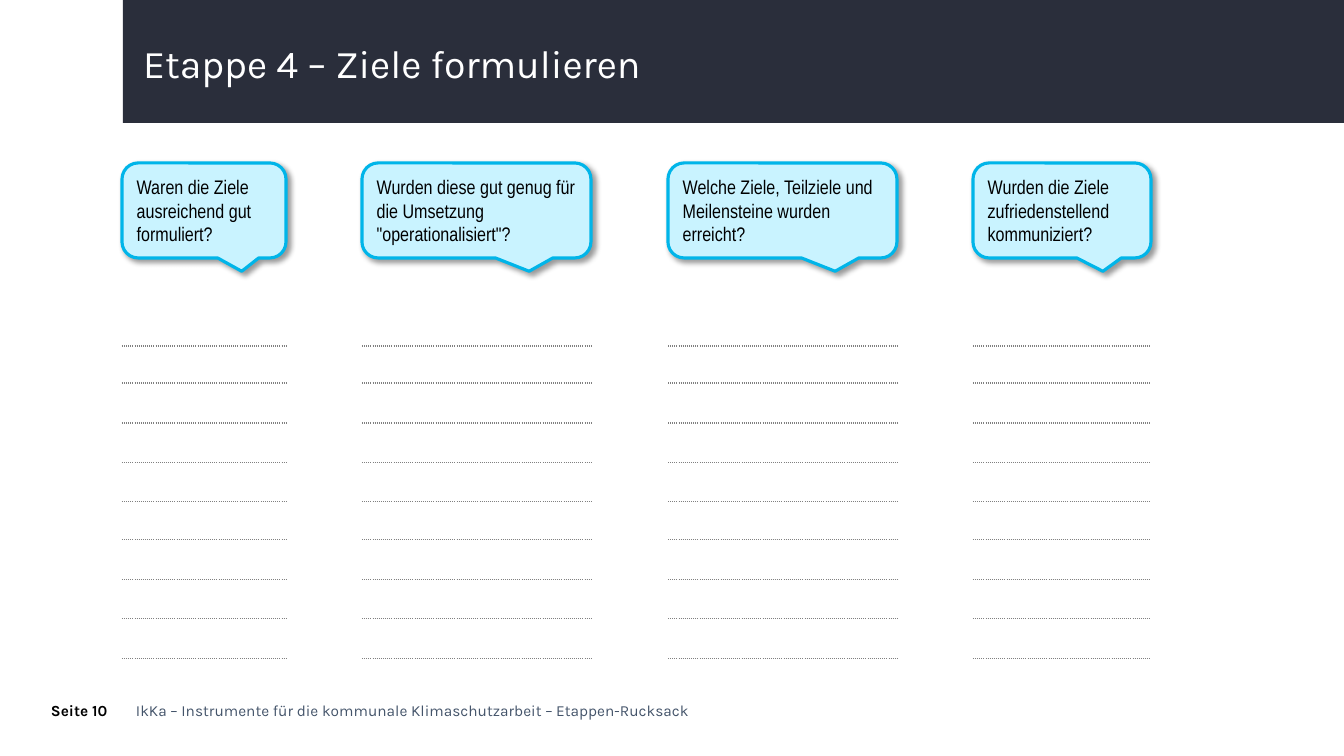
from dataclasses import dataclass

from lxml.etree import SubElement
from pptx import Presentation
from pptx.dml.color import RGBColor
from pptx.enum.shapes import MSO_SHAPE
from pptx.enum.text import MSO_ANCHOR, PP_ALIGN
from pptx.oxml import parse_xml
from pptx.oxml.ns import nsdecls, qn
from pptx.util import Emu, Pt

TITLE = "Etappe 4 – Ziele formulieren"
PAGE = "Seite 10"
FOOTER = "IkKa – Instrumente für die kommunale Klimaschutzarbeit – Etappen-Rucksack"
COLUMNS = [
    ("Waren die Ziele ausreichend gut formuliert?", 122, 164),
    ('Wurden diese gut genug für die Umsetzung "operationalisiert"?', 362, 229),
    ("Welche Ziele, Teilziele und Meilensteine wurden erreicht?", 668, 229),
    ("Wurden die Ziele zufriedenstellend kommuniziert?", 973, 178),
]
ROW_HEIGHTS = [38, 37, 40, 40, 39, 38, 40, 39, 40]
CALLOUT_TOP, CALLOUT_HEIGHT, TABLE_TOP = 163, 95, 308
CALLOUT_ADJUSTMENTS = (0.23, 0.64, 0.17)
NO_GRID_STYLE = "{2D5ABB26-0587-4C30-8999-92F81FD0307C}"


@dataclass(frozen=True)
class Theme:
    bar: str = "2A2E3B"
    white: str = "FFFFFF"
    black: str = "000000"
    footer: str = "44546A"
    callout: str = "C9F3FF"
    outline: str = "00B5E9"
    rule: str = "808080"
    font: str = "Karla"
    callout_font: str = "Arial Narrow"
    title_size: int = 28
    callout_size: int = 14
    footer_size: int = 11


THEME = Theme()


def px(value):
    return Emu(round(value * 914400 / 100.8))


def box(*lengths):
    return [px(length) for length in lengths]


def write(shape, text, font, size, color, bold=False):
    frame = shape.text_frame
    frame.word_wrap = True
    paragraph = frame.paragraphs[0]
    paragraph.alignment = PP_ALIGN.LEFT
    run = paragraph.add_run()
    run.text = text
    run.font.name = font
    run.font.size = Pt(size)
    run.font.bold = bold
    run.font.color.rgb = RGBColor.from_string(color)
    return frame


def add_header(slide):
    bar = slide.shapes.add_shape(MSO_SHAPE.RECTANGLE, *box(123, 0, 1221, 123))
    bar.shadow.inherit = False
    bar.fill.solid()
    bar.fill.fore_color.rgb = RGBColor.from_string(THEME.bar)
    bar.line.fill.background()
    title = slide.shapes.title
    title.left, title.top, title.width, title.height = box(133, 35, 1159, 61)
    frame = write(title, TITLE, THEME.font, THEME.title_size, THEME.white)
    frame.vertical_anchor = MSO_ANCHOR.MIDDLE
    frame.paragraphs[0].line_spacing = 0.9
    title.element.addprevious(bar.element)


def add_footer_text(slide, text, left, width, color, bold):
    text_box = slide.shapes.add_textbox(*box(left, 701, width, 22))
    frame = write(text_box, text, THEME.font, THEME.footer_size, color, bold)
    frame.margin_left = frame.margin_right = 0
    frame.margin_top = frame.margin_bottom = 0


def add_callout(slide, question, left, width):
    callout = slide.shapes.add_shape(
        MSO_SHAPE.ROUNDED_RECTANGULAR_CALLOUT,
        *box(left, CALLOUT_TOP, width, CALLOUT_HEIGHT))
    for index, adjustment in enumerate(CALLOUT_ADJUSTMENTS):
        callout.adjustments[index] = adjustment
    callout.fill.solid()
    callout.fill.fore_color.rgb = RGBColor.from_string(THEME.callout)
    callout.line.color.rgb = RGBColor.from_string(THEME.outline)
    callout.line.width = Pt(2.25)
    callout.shadow.inherit = False
    effects = next(callout.element.iter(qn("a:effectLst")))
    shadow = SubElement(effects, qn("a:outerShdw"), blurRad=str(Pt(4)), dist=str(Pt(3)),
                        dir="2700000", algn="tl", rotWithShape="0")
    color = SubElement(shadow, qn("a:srgbClr"), val=THEME.black)
    SubElement(color, qn("a:alpha"), val="40000")
    frame = write(callout, question, THEME.callout_font, THEME.callout_size, THEME.black)
    frame.vertical_anchor = MSO_ANCHOR.MIDDLE


def add_bottom_rule(cell):
    rule = parse_xml(
        f'<a:lnB {nsdecls("a")} w="{Pt(1)}"><a:solidFill><a:srgbClr val="{THEME.rule}"/>'
        '</a:solidFill><a:prstDash val="sysDot"/></a:lnB>')
    cell._tc.get_or_add_tcPr().insert(0, rule)


def add_answer_lines(slide, left, width):
    graphic = slide.shapes.add_table(
        len(ROW_HEIGHTS), 1, *box(left, TABLE_TOP, width, sum(ROW_HEIGHTS)))
    next(graphic.element.iter(qn("a:tableStyleId"))).text = NO_GRID_STYLE
    table = graphic.table
    table.first_row = table.horz_banding = False
    for row, height in zip(table.rows, ROW_HEIGHTS):
        row.height = px(height)
        cell = row.cells[0]
        cell.margin_top = cell.margin_bottom = 0
        cell.fill.background()
        add_bottom_rule(cell)


def main():
    """Build the goal review slide with four questions and answer lines."""
    presentation = Presentation()
    presentation.slide_width, presentation.slide_height = box(1344, 756)
    slide = presentation.slides.add_slide(presentation.slide_layouts[5])
    add_header(slide)
    add_footer_text(slide, FOOTER, 136, 561, THEME.footer, False)
    add_footer_text(slide, PAGE, 51, 74, THEME.black, True)
    for question, left, width in COLUMNS:
        add_callout(slide, question, left, width)
        add_answer_lines(slide, left, width)
    presentation.save("out.pptx")


if __name__ == "__main__":
    main()
